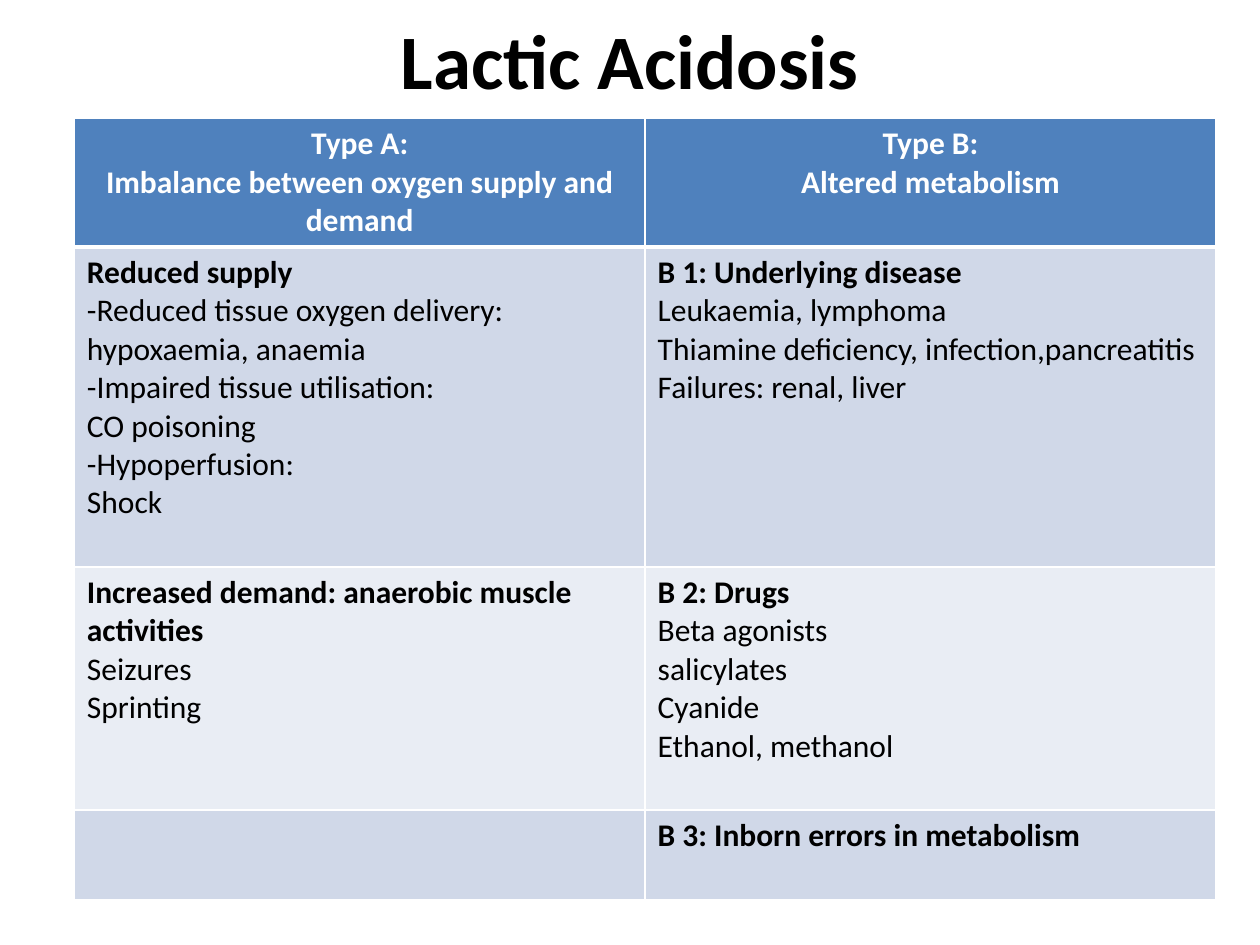
"""Build a slide that compares the two types of lactic acidosis in a table."""
from lxml.etree import SubElement
from pptx import Presentation
from pptx.dml.color import RGBColor
from pptx.enum.text import MSO_ANCHOR as Anchor, PP_ALIGN as Align
from pptx.oxml.ns import qn
from pptx.util import Inches, Pt

BLACK = RGBColor(0x00, 0x00, 0x00)
WHITE = RGBColor(0xFF, 0xFF, 0xFF)
BLUE = RGBColor(0x4F, 0x81, 0xBD)
BAND_DARK = RGBColor(0xD0, 0xD8, 0xE8)
BAND_LIGHT = RGBColor(0xE9, 0xED, 0xF4)

COLUMN_WIDTH = 4.53
ROW_HEIGHTS = (1.02, 2.54, 1.93, 0.71)
ROW_FILLS = (BLUE, BAND_DARK, BAND_LIGHT, BAND_DARK)
ROWS = (
    (
        ("Type A:", "Imbalance between oxygen supply and demand"),
        ("Type B:", "Altered metabolism"),
    ),
    (
        ("Reduced supply", "-Reduced tissue oxygen delivery:", "hypoxaemia, anaemia",
         "-Impaired tissue utilisation:", "CO poisoning", "-Hypoperfusion:", "Shock"),
        ("B 1: Underlying disease", "Leukaemia, lymphoma",
         "Thiamine deficiency, infection,pancreatitis", "Failures: renal, liver"),
    ),
    (
        ("Increased demand: anaerobic muscle activities", "Seizures", "Sprinting"),
        ("B 2: Drugs", "Beta agonists", "salicylates", "Cyanide", "Ethanol, methanol"),
    ),
    ((), ("B 3: Inborn errors in metabolism",)),
)


def write_line(paragraph, text, align, color, **font_format):
    """Write one formatted line of text into a paragraph."""
    paragraph.alignment = align
    run = paragraph.add_run()
    run.text = text
    run.font.color.rgb = color
    for name, value in {"name": "Calibri", **font_format}.items():
        setattr(run.font, name, value)


def add_title(slide, text):
    """Add the centred title across the top of the slide."""
    box = slide.shapes.add_textbox(Inches(0.5), Inches(-0.11), Inches(9), Inches(1.16))
    frame = box.text_frame
    for name, value in {"word_wrap": True, "vertical_anchor": Anchor.MIDDLE}.items():
        setattr(frame, name, value)
    write_line(frame.paragraphs[0], text, Align.CENTER, BLACK, size=Pt(44), bold=True)


def set_borders(cell, widths):
    """Draw white cell borders with the given widths in points."""
    properties = cell._tc.get_or_add_tcPr()
    for side, width in widths.items():
        line = SubElement(properties, qn(f"a:ln{side}"), w=str(Pt(width)))
        fill = SubElement(line, qn("a:solidFill"))
        SubElement(fill, qn("a:srgbClr"), val=str(WHITE))


def fill_cell(cell, lines, fill, is_header, is_below_header):
    """Style one cell and write its lines, the first one as a heading."""
    set_borders(cell, {"L": 1, "R": 1, "T": 3 if is_below_header else 1,
                       "B": 3 if is_header else 1})
    cell.fill.solid()
    cell.fill.fore_color.rgb = fill
    align, color = (Align.CENTER, WHITE) if is_header else (Align.LEFT, BLACK)
    frame = cell.text_frame
    for index, text in enumerate(lines):
        paragraph = frame.add_paragraph() if index else frame.paragraphs[0]
        write_line(paragraph, text, align, color, size=Pt(18),
                   bold=is_header or index == 0)


def add_comparison_table(slide):
    """Add the table with a header and three banded rows."""
    table = slide.shapes.add_table(
        len(ROWS), len(ROWS[0]), Inches(0.59), Inches(0.94),
        Inches(COLUMN_WIDTH * len(ROWS[0])), Inches(sum(ROW_HEIGHTS)),
    ).table
    for column in table.columns:
        column.width = Inches(COLUMN_WIDTH)
    for row_index, (texts, height, fill) in enumerate(zip(ROWS, ROW_HEIGHTS, ROW_FILLS)):
        row = table.rows[row_index]
        row.height = Inches(height)
        for cell, lines in zip(row.cells, texts):
            fill_cell(cell, lines, fill, row_index == 0, row_index == 1)


def main():
    """Create the presentation and save it."""
    presentation = Presentation()
    presentation.slide_width = Inches(10)
    presentation.slide_height = Inches(7.5)
    slide = presentation.slides.add_slide(presentation.slide_layouts[6])
    add_title(slide, "Lactic Acidosis")
    add_comparison_table(slide)
    presentation.save("out.pptx")


if __name__ == "__main__":
    main()
